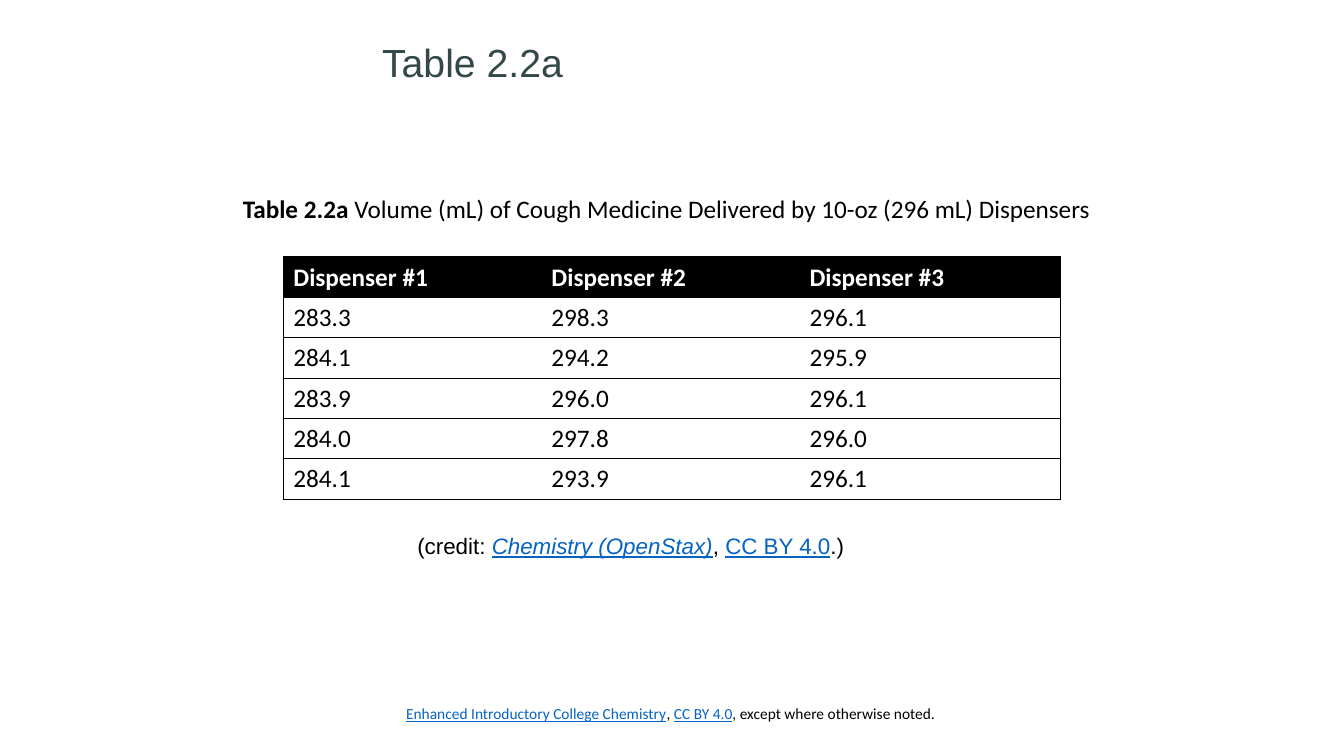
from pptx import Presentation
from pptx.dml.color import RGBColor
from pptx.enum.text import MSO_ANCHOR, MSO_AUTO_SIZE, PP_ALIGN
from pptx.oxml.ns import qn
from pptx.util import Inches, Pt
from lxml import etree

BLACK = RGBColor(0x00, 0x00, 0x00)
WHITE = RGBColor(0xFF, 0xFF, 0xFF)
SLATE = RGBColor(0x35, 0x48, 0x49)
LINK_BLUE = RGBColor(0x05, 0x63, 0xC1)
LEFT = PP_ALIGN.LEFT
BOTTOM = MSO_ANCHOR.BOTTOM
FIT_SHAPE = MSO_AUTO_SIZE.SHAPE_TO_FIT_TEXT
NO_FIT = MSO_AUTO_SIZE.NONE

LINK = {"color": LINK_BLUE, "underline": True}
ROWS = [
    ("Dispenser #1", "Dispenser #2", "Dispenser #3"),
    ("283.3", "298.3", "296.1"),
    ("284.1", "294.2", "295.9"),
    ("283.9", "296.0", "296.1"),
    ("284.0", "297.8", "296.0"),
    ("284.1", "293.9", "296.1"),
]
COLUMN_WIDTHS = (2.56, 2.56, 2.59)
ROW_HEIGHT = 0.4


def add_run(p, text, font, size, color=BLACK, **formats):
    r = p.add_run()
    r.text = text
    r.font.color.rgb = color
    for name, value in {"name": font, "size": Pt(size), **formats}.items():
        setattr(r.font, name, value)


def add_title(slide, text):
    s = slide.shapes.title
    s.left, s.top, s.width, s.height = map(Inches, (3.69, 0.2, 4.3, 0.7))
    tf = s.text_frame
    tf.vertical_anchor = BOTTOM
    tf.auto_size = NO_FIT
    p = tf.paragraphs[0]
    p.alignment = LEFT
    p.line_spacing = 0.9
    add_run(p, text, "Arial", 28, SLATE)


def add_text(slide, box, font, size, runs, wrap=True, fit=FIT_SHAPE):
    tf = slide.shapes.add_textbox(*map(Inches, box)).text_frame
    tf.word_wrap = wrap
    tf.auto_size = fit
    for text, formats in runs:
        add_run(tf.paragraphs[0], text, font, size, **formats)


def set_borders(cell, visible):
    tcPr = cell._tc.get_or_add_tcPr()
    for side in ("L", "R", "T", "B"):
        ln = etree.SubElement(tcPr, qn(f"a:ln{side}"), w=str(Pt(1)))
        if side in visible:
            fill = etree.SubElement(ln, qn("a:solidFill"))
            etree.SubElement(fill, qn("a:srgbClr"), val=str(BLACK))
        else:
            etree.SubElement(ln, qn("a:noFill"))


def add_data_table(slide, left, top):
    last = len(COLUMN_WIDTHS) - 1
    table = slide.shapes.add_table(
        len(ROWS), len(COLUMN_WIDTHS), Inches(left), Inches(top),
        Inches(sum(COLUMN_WIDTHS)), Inches(ROW_HEIGHT * len(ROWS))).table
    table.horz_banding = False
    for column, width in zip(table.columns, COLUMN_WIDTHS):
        column.width = Inches(width)
    for i, values in enumerate(ROWS):
        header = i == 0
        for j, value in enumerate(values):
            cell = table.cell(i, j)
            # Rules between rows, and an outer frame without inner verticals
            set_borders(cell, "TB" + "L" * (j == 0) + "R" * (j == last))
            cell.fill.solid()
            cell.fill.fore_color.rgb = BLACK if header else WHITE
            add_run(cell.text_frame.paragraphs[0], value, "Calibri", 18,
                    WHITE if header else BLACK, bold=header)


def main():
    prs = Presentation()
    prs.slide_width, prs.slide_height = Inches(13.33), Inches(7.5)
    slide = prs.slides.add_slide(prs.slide_layouts[5])

    # Title and table caption
    add_title(slide, "Table 2.2a")
    add_text(slide, (2.31, 1.87, 8.72, 0.4), "Calibri", 18, [
        ("Table 2.2a ", {"bold": True}),
        ("Volume (mL) of Cough Medicine Delivered by 10-oz (296 mL) Dispensers", {}),
    ])

    # Measurements
    add_data_table(slide, 2.81, 2.55)

    # Table credit
    add_text(slide, (4.04, 5.23, 4.49, 0.37), "Arial", 16, [
        ("(credit: ", {}),
        ("Chemistry (OpenStax)", {**LINK, "italic": True}),
        (", ", {}),
        ("CC BY 4.0", LINK),
        (".)", {}),
    ], wrap=False)

    # Footer attribution
    add_text(slide, (3.93, 6.94, 7.07, 0.4), "Calibri", 11, [
        ("Enhanced Introductory College Chemistry", LINK),
        (", ", {}),
        ("CC BY 4.0", LINK),
        (", except where otherwise noted.", {}),
    ], fit=NO_FIT)

    prs.save("out.pptx")


if __name__ == "__main__":
    main()
